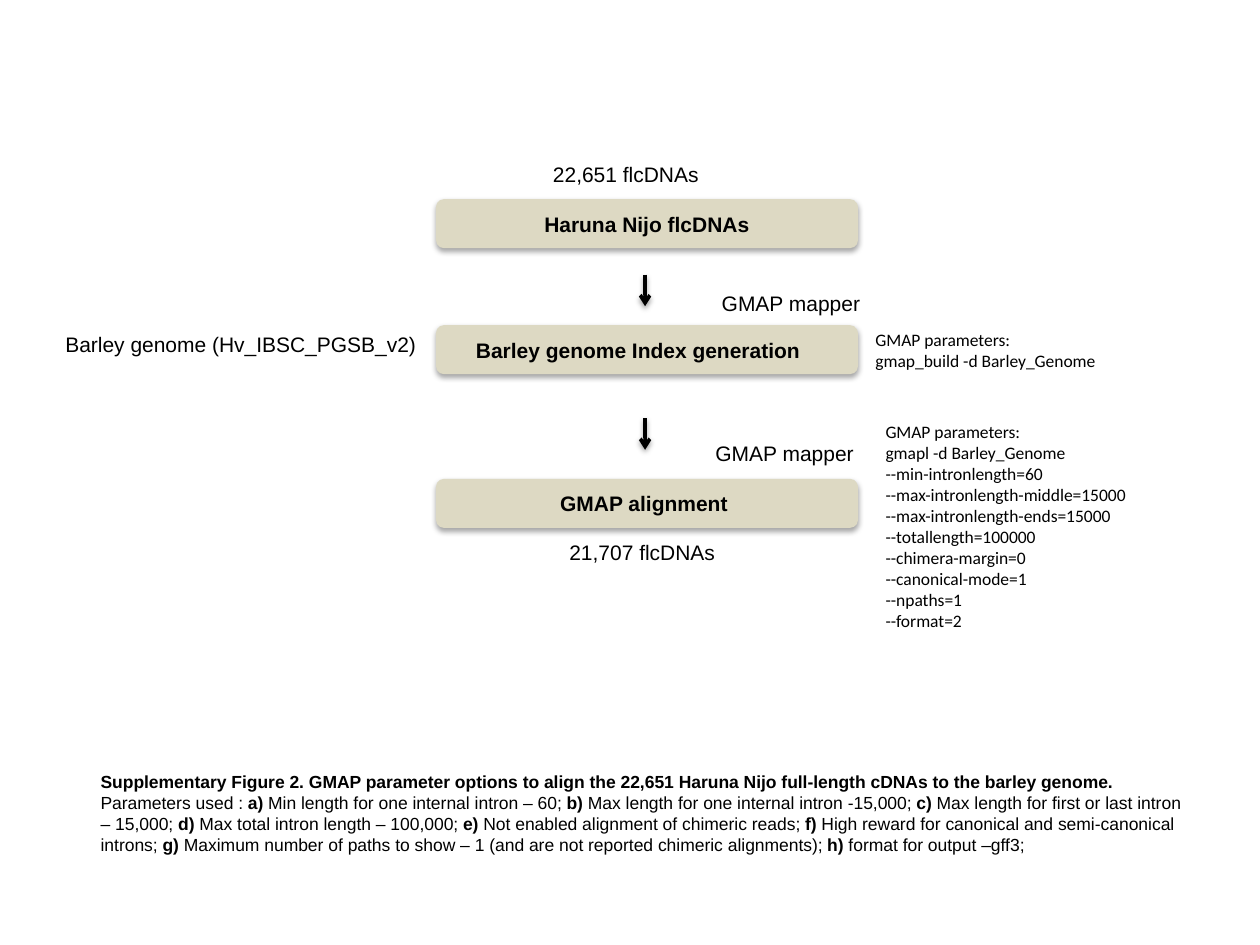
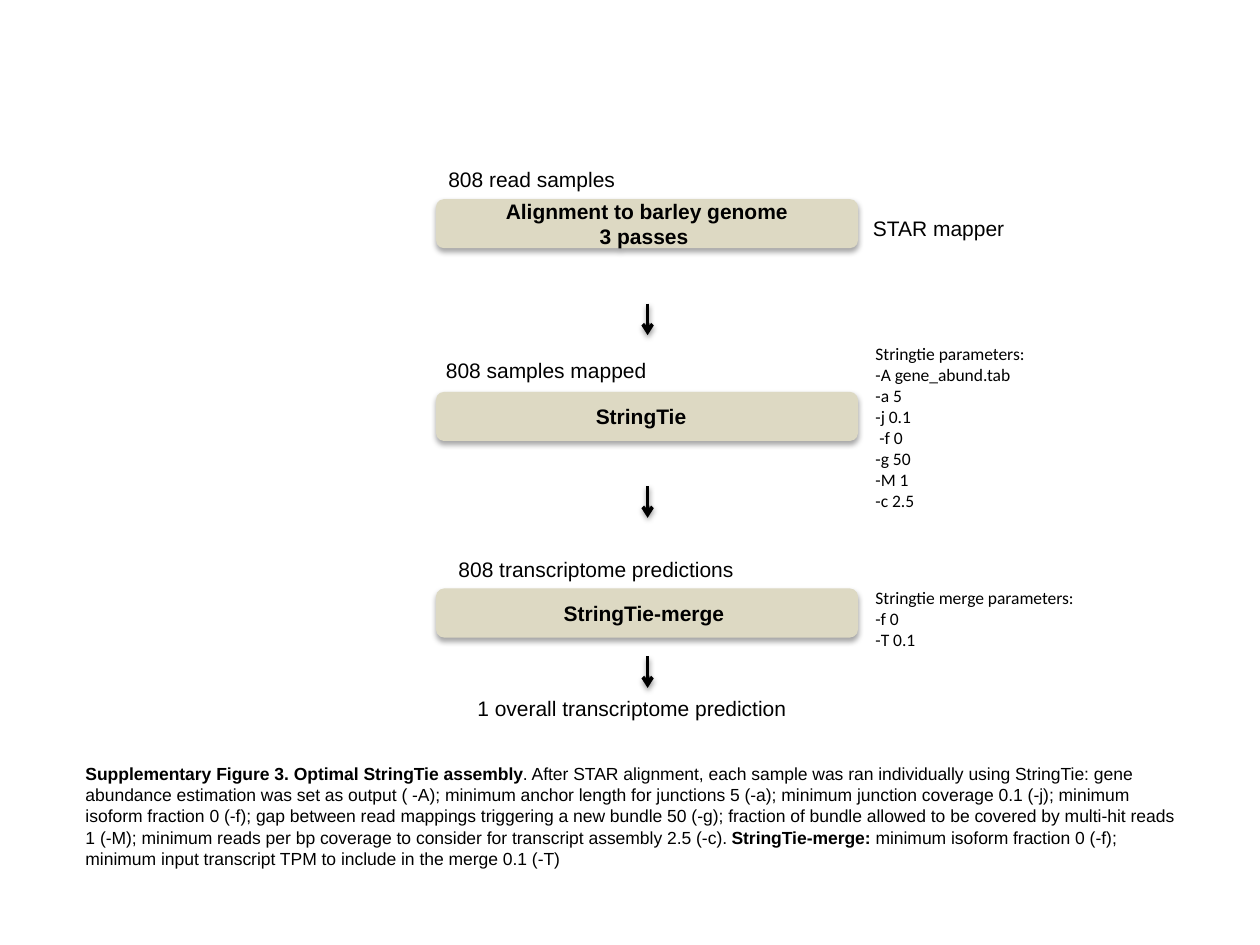
import pptx
import pptx.dml.color
import pptx.enum.shapes
import pptx.enum.text
import pptx.oxml
import pptx.oxml.ns
import pptx.util
from lxml import etree

SLIDE_W, SLIDE_H = 10, 7.5
BLACK = pptx.dml.color.RGBColor(0, 0, 0)
SAND = pptx.dml.color.RGBColor(0xDD, 0xD9, 0xC3)

# Columns shared by both flow charts, as lengths in inches
STEP_LEFT, STEP_W, STEP_H = 3.46, 3.35, 0.39
PARAMETERS_LEFT, PARAMETERS_W = 6.85, 2.24
CAPTION_W = 8.85
ARROW_LENGTH = 0.25
INSET_X, INSET_Y = 0.1, 0.05
SPACE_W = 0.046  # one space of 12 pt Arial

# steps: top, text, shift of the text to the left in spaces
# counts: left, top, width, text; parameters: left, top, lines
# Text between ** marks is bold.
FIGURES = [
    {
        "steps": [
            (1.58, "Haruna Nijo flcDNAs", 0),
            (2.58, "Barley genome Index generation", 3),
            (3.8, "GMAP alignment", 1),
        ],
        "arrow_x": 5.12,
        "arrow_tops": [2.18, 3.32],
        "counts": [
            (5.63, 2.26, 1.36, "GMAP mapper"),
            (4.29, 1.23, 1.42, "22,651 flcDNAs"),
            (4.42, 4.23, 1.41, "21,707 flcDNAs"),
            (5.58, 3.45, 1.36, "GMAP mapper"),
            (0.42, 2.58, 3.06, "Barley genome (Hv_IBSC_PGSB_v2)"),
        ],
        "parameters": [
            (PARAMETERS_LEFT, 2.56, ["GMAP parameters:", "gmap_build -d Barley_Genome"]),
            (6.93, 3.29, [
                "GMAP parameters:", "gmapl -d Barley_Genome", "--min-intronlength=60",
                "--max-intronlength-middle=15000", "--max-intronlength-ends=15000",
                "--totallength=100000", "--chimera-margin=0", "--canonical-mode=1",
                "--npaths=1", "--format=2",
            ]),
        ],
        "caption": (0.7, 6.07, 4, (
            "**Supplementary Figure 2. GMAP parameter options to align the 22,651 Haruna Nijo "
            "full-length cDNAs to the barley genome.** Parameters used : **a)** Min length for "
            "one internal intron – 60; **b)** Max length for one internal intron -15,000; "
            "**c)** Max length for first or last intron – 15,000; **d)** Max total intron "
            "length – 100,000; **e) **Not enabled alignment of chimeric reads; **f)** High "
            "reward for canonical and semi-canonical introns; **g)** Maximum number of paths "
            "to show – 1 (and are not reported chimeric alignments); **h)** format for output "
            "–gff3;"
        )),
    },
    {
        "steps": [
            (1.58, "Alignment to barley genome\n3 passes ", 0),
            (3.11, "StringTie", 2),
            (4.67, "StringTie-merge", 1),
        ],
        "arrow_x": 5.14,
        "arrow_tops": [2.41, 3.86, 5.21],
        "counts": [
            (6.83, 1.66, 1.3, "STAR mapper"),
            (3.46, 1.27, 1.58, "808 read samples"),
            (3.44, 2.79, 1.85, "808 samples mapped"),
            (3.54, 4.37, 2.45, "808 transcriptome predictions"),
            (3.69, 5.47, 2.8, "1 overall transcriptome prediction"),
        ],
        "parameters": [
            (PARAMETERS_LEFT, 2.67, [
                "Stringtie parameters:", "-A gene_abund.tab", "-a 5", "-j 0.1", " -f 0",
                "-g 50", "-M 1", "-c 2.5",
            ]),
            (PARAMETERS_LEFT, 4.61, ["Stringtie merge parameters:", "-f 0", "-T 0.1"]),
        ],
        "caption": (0.58, 6.01, 5, (
            "**Supplementary Figure 3. Optimal StringTie assembly**. After STAR alignment, each "
            "sample was ran individually using StringTie: gene abundance estimation was set as "
            "output ( -A); minimum anchor length for junctions 5 (-a); minimum junction coverage "
            "0.1 (-j); minimum isoform fraction 0 (-f); gap between read mappings triggering a "
            "new bundle 50 (-g); fraction of bundle allowed to be covered by multi-hit reads 1 "
            "(-M); minimum reads per bp coverage to consider for transcript assembly 2.5 (-c). "
            "**StringTie-merge:** minimum isoform fraction 0 (-f); minimum input transcript TPM "
            "to include in the merge 0.1 (-T)"
        )),
    },
]


def inches(*lengths):
    return [pptx.util.Inches(length) for length in lengths]


def write(frame, text, size=12, font="Arial", bold=False, align=None):
    """Fill a text frame; each line is a paragraph and ** toggles bold."""
    for row, line in enumerate(text.split("\n")):
        paragraph = frame.paragraphs[0] if row == 0 else frame.add_paragraph()
        paragraph.alignment = align
        for part, words in enumerate(line.split("**")):
            if not words:
                continue
            run = paragraph.add_run()
            run.text = words
            run.font.size = pptx.util.Pt(size)
            run.font.name = font
            run.font.bold = bold != (part % 2 == 1)
            run.font.color.rgb = BLACK


def add_text(slide, left, top, width, text, lines=1, wrap=True, size=12, **text_format):
    height = lines * size * 1.2 / 72 + 2 * INSET_Y
    frame = slide.shapes.add_textbox(*inches(left, top, width, height)).text_frame
    frame.word_wrap = wrap
    frame.auto_size = pptx.enum.text.MSO_AUTO_SIZE.SHAPE_TO_FIT_TEXT
    write(frame, text, size=size, **text_format)


def cast_shadow(properties, distance, opacity):
    """Give a shape's properties a soft black shadow straight below it."""
    tag = pptx.oxml.ns.qn
    effects = properties.find(tag("a:effectLst"))
    if effects is None:
        effects = etree.SubElement(properties, tag("a:effectLst"))
    shadow = etree.SubElement(
        effects, tag("a:outerShdw"), blurRad=str(pptx.util.Pt(3.1)),
        dist=str(pptx.util.Pt(distance)), dir="5400000", rotWithShape="0")
    colour = etree.SubElement(shadow, tag("a:srgbClr"), val=str(BLACK))
    etree.SubElement(colour, tag("a:alpha"), val=str(opacity * 1000))


def add_step(slide, top, text, spaces):
    step = slide.shapes.add_shape(
        pptx.enum.shapes.MSO_SHAPE.ROUNDED_RECTANGLE, *inches(STEP_LEFT, top, STEP_W, STEP_H))
    step.fill.solid()
    step.fill.fore_color.rgb = SAND
    step.line.fill.background()
    step.shadow.inherit = False
    cast_shadow(step._element.spPr, 1.8, 35)
    frame = step.text_frame
    frame.word_wrap = True
    frame.vertical_anchor = pptx.enum.text.MSO_ANCHOR.MIDDLE
    frame.margin_right = pptx.util.Inches(INSET_X + spaces * SPACE_W)
    write(frame, text, bold=True, align=pptx.enum.text.PP_ALIGN.CENTER)


def add_arrow(slide, x, top):
    arrow = slide.shapes.add_connector(
        pptx.enum.shapes.MSO_CONNECTOR.STRAIGHT, *inches(x, top, x, top + ARROW_LENGTH))
    arrow.line.color.rgb = BLACK
    arrow.line.width = pptx.util.Pt(2)
    etree.SubElement(arrow.line._get_or_add_ln(), pptx.oxml.ns.qn("a:tailEnd"), type="arrow")
    cast_shadow(arrow._element.spPr, 1.6, 38)


def add_figure(deck, figure):
    slide = deck.slides.add_slide(deck.slide_layouts[6])
    for step in figure["steps"]:
        add_step(slide, *step)
    for top in figure["arrow_tops"]:
        add_arrow(slide, figure["arrow_x"], top)
    for count in figure["counts"]:
        add_text(slide, *count, wrap=False)
    for left, top, lines in figure["parameters"]:
        add_text(slide, left, top, PARAMETERS_W, "\n".join(lines),
                 lines=len(lines), size=10, font="Calibri")
    left, top, lines, caption = figure["caption"]
    add_text(slide, left, top, CAPTION_W, caption, lines=lines, size=10)


def main():
    deck = pptx.Presentation()
    deck.slide_width, deck.slide_height = inches(SLIDE_W, SLIDE_H)
    for figure in FIGURES:
        add_figure(deck, figure)
    deck.save("out.pptx")


if __name__ == "__main__":
    main()
